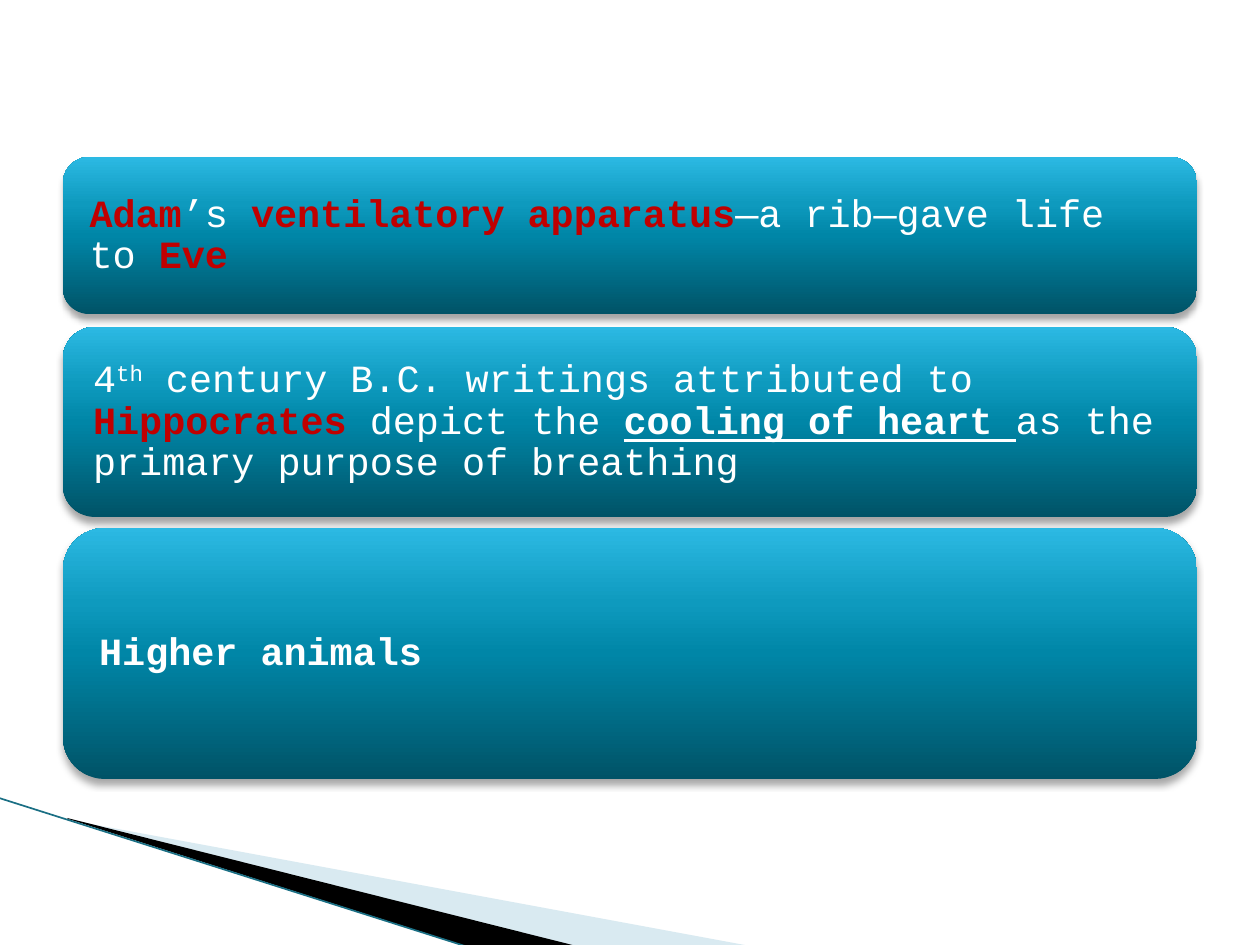
import pptx
import pptx.util
import pptx.dml.color
import pptx.enum.shapes
import pptx.enum.text
import pptx.oxml.ns
import lxml.etree

PX = 914400 / 126
FONT = "Courier New"
COLORS = {
    "white": "FFFFFF",
    "accent": "C00000",
    "black": "000000",
    "pale": "A0CBDC",
    "edge": "1A6F84",
}
CARD_STOPS = [(0, "005367"), (50, "0086A7"), (70, "0E9ABE"), (100, "2CB9E3")]

NORMAL = {}
ACCENT = {"color": "accent", "bold": True}
BOLD = {"bold": True}
CARDS = [
    ((63, 157, 1134, 157), 19, [
        ("Adam", ACCENT), ("’s ", NORMAL), ("ventilatory apparatus", ACCENT),
        ("—a rib—gave life to ", NORMAL), ("Eve", ACCENT)]),
    ((63, 327, 1134, 190), 21, [
        ("4", NORMAL), ("th", {"raised": True}),
        (" century B.C. writings attributed to ", NORMAL),
        ("Hippocrates", ACCENT), (" depict the ", NORMAL),
        ("cooling of heart ", {"bold": True, "underline": True}),
        ("as the primary purpose of breathing", NORMAL)]),
    ((63, 528, 1134, 251), 24, [("Higher animals", BOLD)]),
]


def emu(px):
    return pptx.util.Emu(round(px * PX))


def rgb(name):
    return pptx.dml.color.RGBColor.from_string(COLORS[name])


def add_xml(parent, tag, **attributes):
    return lxml.etree.SubElement(parent, pptx.oxml.ns.qn(tag), attributes)


def add_wedge(slide, box, points, color, alpha=100):
    left, top = box
    corners = [(left + x, top + y) for x, y in points]
    builder = slide.shapes.build_freeform(*corners[0], scale=PX)
    builder.add_line_segments(corners[1:], close=True)
    wedge = builder.convert_to_shape()
    wedge.shadow.inherit = False
    wedge.fill.solid()
    wedge.fill.fore_color.rgb = rgb(color)
    wedge.line.fill.background()
    if alpha < 100:
        tint = wedge._element.spPr.find(".//" + pptx.oxml.ns.qn("a:srgbClr"))
        add_xml(tint, "a:alpha", val=str(alpha * 1000))


def add_corner(slide, box):
    left, top = box
    add_wedge(slide, (left + 69, top + 21),
              [(0, 1), (681, 127), (506, 127), (0, 0)], "pale", 40)
    add_wedge(slide, (left + 67, top + 20),
              [(0, 0), (509, 128), (402, 129), (1, 1)], "black")
    edge = slide.shapes.add_connector(
        pptx.enum.shapes.MSO_CONNECTOR.STRAIGHT,
        emu(left - 1), emu(top), emu(left + 468), emu(top + 149))
    edge.line.color.rgb = rgb("edge")
    edge.line.width = pptx.util.Pt(0.95)
    add_xml(edge._element.spPr, "a:effectLst")


def style_card(card):
    card.fill.gradient()
    card.fill.gradient_angle = 90
    card.line.fill.background()
    properties = card._element.spPr
    stops = properties.find(".//" + pptx.oxml.ns.qn("a:gsLst"))
    for stop in list(stops):
        stops.remove(stop)
    for position, color in CARD_STOPS:
        stop = add_xml(stops, "a:gs", pos=str(position * 1000))
        add_xml(stop, "a:srgbClr", val=color)
    effects = add_xml(properties, "a:effectLst")
    shadow = add_xml(effects, "a:outerShdw", blurRad=str(pptx.util.Pt(4)),
                     dist=str(pptx.util.Pt(3)), dir="5400000", rotWithShape="0")
    shade = add_xml(shadow, "a:srgbClr", val=COLORS["black"])
    add_xml(shade, "a:alpha", val="35000")


def add_card(slide, box, inset, phrases):
    card = slide.shapes.add_shape(
        pptx.enum.shapes.MSO_SHAPE.ROUNDED_RECTANGLE, *map(emu, box))
    style_card(card)
    frame = card.text_frame
    frame.word_wrap = True
    frame.vertical_anchor = pptx.enum.text.MSO_ANCHOR.MIDDLE
    frame.margin_left = frame.margin_right = emu(inset)
    frame.margin_top = frame.margin_bottom = emu(inset)
    statement = frame.paragraphs[0]
    statement.alignment = pptx.enum.text.PP_ALIGN.LEFT
    statement.line_spacing = 0.9
    for words, style in phrases:
        phrase = statement.add_run()
        phrase.text = words
        phrase.font.name = FONT
        phrase.font.size = pptx.util.Pt(22)
        phrase.font.bold = style.get("bold", False)
        phrase.font.underline = style.get("underline", False)
        phrase.font.color.rgb = rgb(style.get("color", "white"))
        if style.get("raised"):
            phrase.font._element.set("baseline", "30000")


def main():
    presentation = pptx.Presentation()
    presentation.slide_width = emu(1260)
    presentation.slide_height = emu(945)
    slide = presentation.slides.add_slide(presentation.slide_layouts[6])
    slide.background.fill.solid()
    slide.background.fill.fore_color.rgb = rgb("white")
    add_corner(slide, (0, 798))
    for box, inset, phrases in CARDS:
        add_card(slide, box, inset, phrases)
    presentation.save("out.pptx")


if __name__ == "__main__":
    main()
